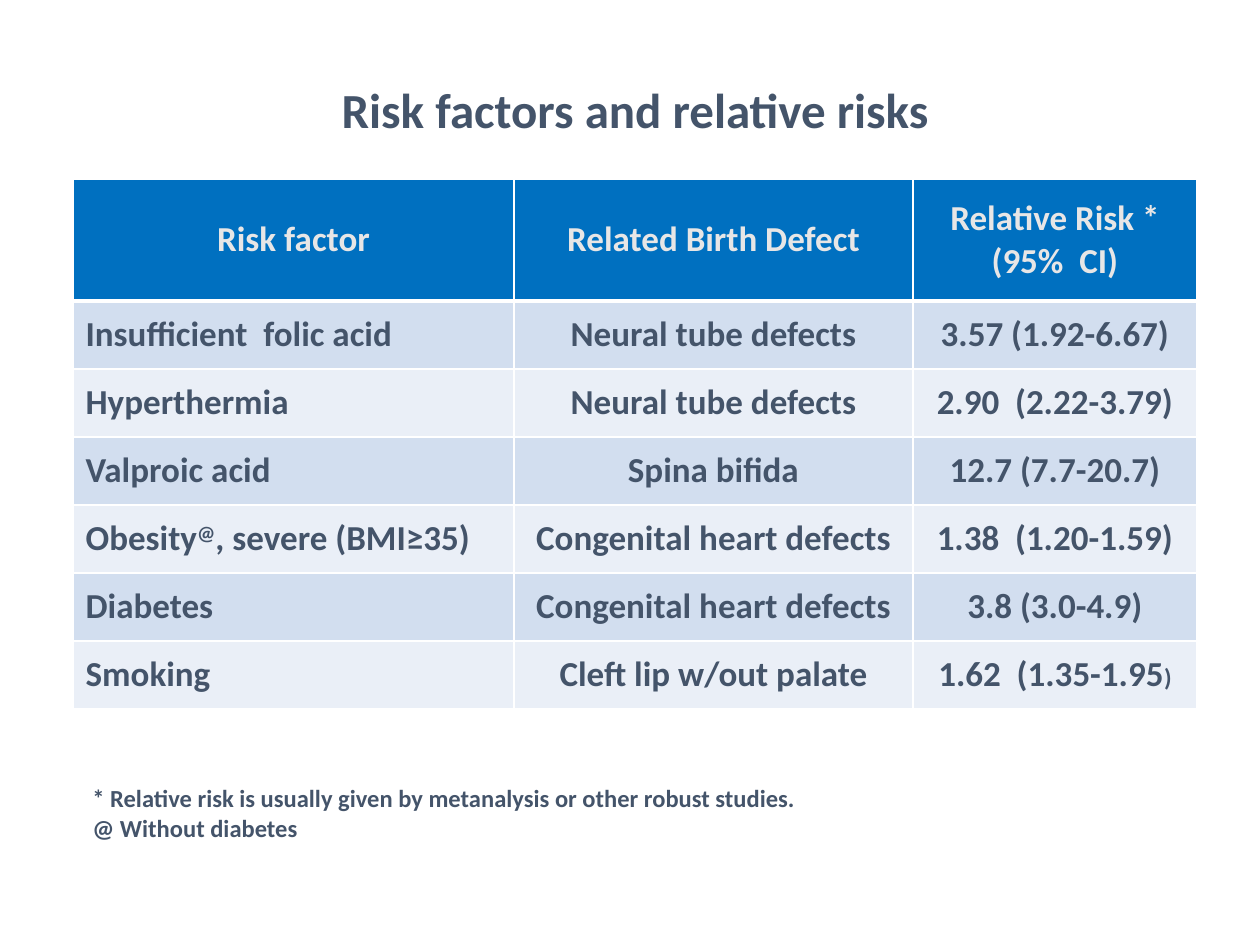
import dataclasses

import lxml.etree
import pptx
import pptx.dml.color
import pptx.enum.text
import pptx.oxml.ns
import pptx.util

PX = 914400 / 126
ALIGN = pptx.enum.text.PP_ALIGN
ANCHOR = pptx.enum.text.MSO_ANCHOR


@dataclasses.dataclass(frozen=True)
class Theme:
    font: str = "Calibri"
    ink: str = "44546A"
    header_ink: str = "E7E6E6"
    header_fill: str = "0070C0"
    bands: tuple = ("D2DEEF", "EAEFF7")
    rule: str = "FFFFFF"
    title_size: int = 28
    table_size: int = 20
    note_size: int = 14


THEME = Theme()
TITLE = "Risk factors and relative risks"
HEADINGS = ["Risk factor", "Related Birth Defect", "Relative Risk *\n(95%  CI)"]
RISKS = [
    ["Insufficient  folic acid", "Neural tube defects", "3.57 (1.92-6.67)"],
    ["Hyperthermia", "Neural tube defects", "2.90  (2.22-3.79)"],
    ["Valproic acid", "Spina bifida", "12.7 (7.7-20.7)"],
    [["Obesity", ("@", {"baseline": 30000}), ", severe (BMI≥35)"],
     "Congenital heart defects", "1.38  (1.20-1.59)"],
    ["Diabetes", "Congenital heart defects", "3.8 (3.0-4.9)"],
    ["Smoking", "Cleft lip w/out palate",
     ["1.62  (1.35-1.95", (")", {"size": THEME.note_size})]],
]
FOOTNOTES = ("* Relative risk is usually given by metanalysis or other robust studies.\n"
             "@ Without diabetes")
COLUMN_WIDTHS = [441, 399, 284]
ROW_HEIGHTS = [122] + [68] * len(RISKS)


def px(length):
    return pptx.util.Emu(round(length * PX))


def rgb(colour):
    return pptx.dml.color.RGBColor.from_string(colour)


def apply(target, values):
    for name, value in values.items():
        setattr(target, name, value)


def add_run(paragraph, piece, size, colour):
    words, changes = piece if isinstance(piece, tuple) else (piece, {})
    run = paragraph.add_run()
    run.text = words
    apply(run.font, {"name": THEME.font, "bold": True,
                     "size": pptx.util.Pt(changes.get("size", size))})
    run.font.color.rgb = rgb(colour)
    if "baseline" in changes:
        run.font._element.set("baseline", str(changes["baseline"]))


def write(frame, content, size, colour, paragraph_format):
    lines = content.split("\n") if isinstance(content, str) else [content]
    for index, line in enumerate(lines):
        paragraph = frame.add_paragraph() if index else frame.paragraphs[0]
        apply(paragraph, paragraph_format)
        for piece in [line] if isinstance(line, str) else line:
            add_run(paragraph, piece, size, colour)


def rule_cell(cell, bottom_width):
    properties = cell._tc.get_or_add_tcPr()
    widths = {"a:lnL": 1, "a:lnR": 1, "a:lnT": 1, "a:lnB": bottom_width}
    for position, (side, width) in enumerate(widths.items()):
        line = lxml.etree.Element(pptx.oxml.ns.qn(side), w=str(pptx.util.Pt(width)))
        fill = lxml.etree.SubElement(line, pptx.oxml.ns.qn("a:solidFill"))
        lxml.etree.SubElement(fill, pptx.oxml.ns.qn("a:srgbClr"), val=THEME.rule)
        properties.insert(position, line)


def fill_cell(cell, content, ink, fill, alignment, bottom_width):
    cell.vertical_anchor = ANCHOR.MIDDLE
    cell.fill.solid()
    cell.fill.fore_color.rgb = rgb(fill)
    rule_cell(cell, bottom_width)
    write(cell.text_frame, content, THEME.table_size, ink, {"alignment": alignment})


def add_title(slide):
    title = slide.shapes.title
    apply(title, {"left": px(5), "top": px(13), "width": px(1260), "height": px(199)})
    title.text_frame.vertical_anchor = ANCHOR.MIDDLE
    write(title.text_frame, TITLE, THEME.title_size, THEME.ink,
          {"alignment": ALIGN.CENTER, "line_spacing": 0.9})


def add_risk_table(slide):
    table = slide.shapes.add_table(
        len(ROW_HEIGHTS), len(COLUMN_WIDTHS), px(73), px(179),
        px(sum(COLUMN_WIDTHS)), px(sum(ROW_HEIGHTS))).table
    for column, width in zip(table.columns, COLUMN_WIDTHS):
        column.width = px(width)
    for row, height in zip(table.rows, ROW_HEIGHTS):
        row.height = px(height)
    for column, heading in enumerate(HEADINGS):
        fill_cell(table.cell(0, column), heading, THEME.header_ink,
                  THEME.header_fill, ALIGN.CENTER, 3)
    for row, risk in enumerate(RISKS):
        for column, content in enumerate(risk):
            fill_cell(table.cell(row + 1, column), content, THEME.ink,
                      THEME.bands[row % 2],
                      ALIGN.CENTER if column else ALIGN.LEFT, 1)


def add_footnotes(slide):
    frame = slide.shapes.add_textbox(px(80), px(777), px(740), px(72)).text_frame
    apply(frame, {"word_wrap": False,
                  "auto_size": pptx.enum.text.MSO_AUTO_SIZE.SHAPE_TO_FIT_TEXT})
    write(frame, FOOTNOTES, THEME.note_size, THEME.ink, {"alignment": ALIGN.LEFT})


def main():
    deck = pptx.Presentation()
    apply(deck, {"slide_width": px(1260), "slide_height": px(945)})
    slide = deck.slides.add_slide(deck.slide_layouts[5])
    add_title(slide)
    add_risk_table(slide)
    add_footnotes(slide)
    deck.save("out.pptx")


if __name__ == "__main__":
    main()
